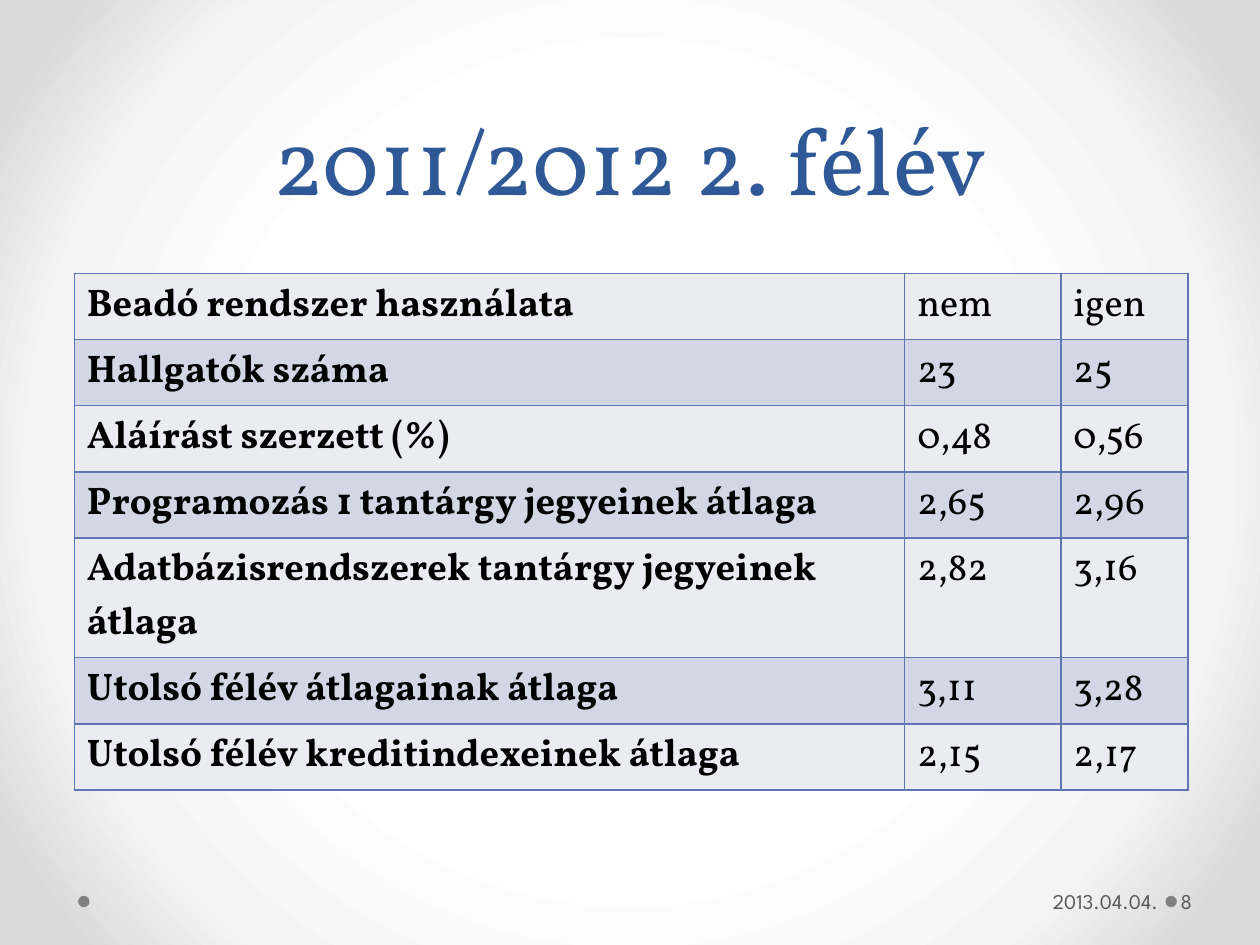
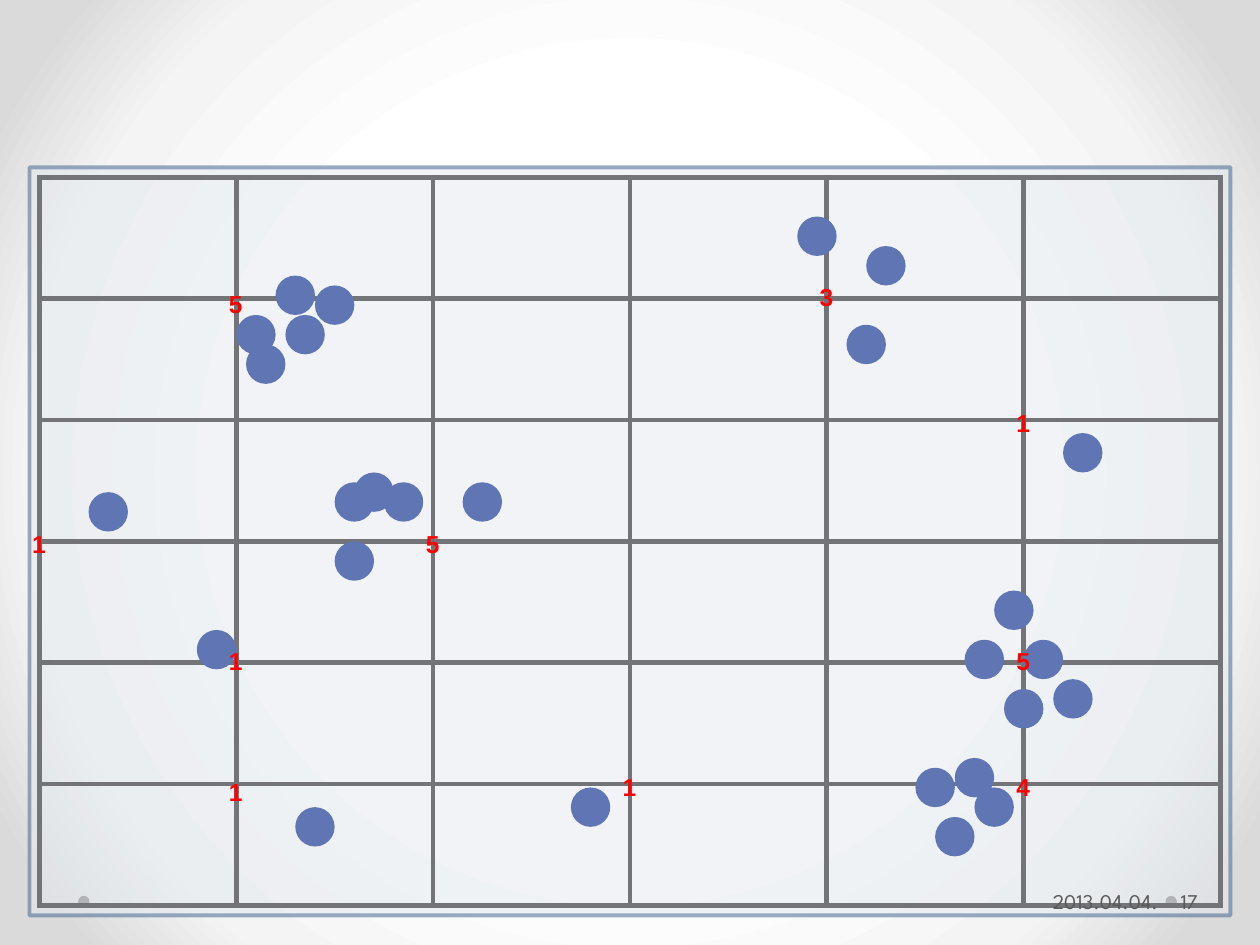
from collections import namedtuple
from dataclasses import dataclass

from pptx import Presentation
from pptx.dml.color import RGBColor
from pptx.enum.shapes import MSO_SHAPE as Preset
from pptx.enum.text import MSO_ANCHOR as Anchor, PP_ALIGN as Align
from pptx.oxml import parse_xml
from pptx.oxml.ns import nsdecls, qn
from pptx.util import Inches, Pt

Box = namedtuple("Box", "left top width height")


@dataclass(frozen=True)
class Theme:
    title_color: str = "2F5897"
    accent: str = "6076B4"
    row_fills: tuple = ("EAECF2", "D2D6E5")
    text: str = "000000"
    footer_text: str = "595959"
    bullet: str = "808080"
    veil: str = "E4E9EF"
    veil_line: str = "385D8A"
    count: str = "FF0000"
    backdrop: tuple = ((50, "FFFFFF"), (76, "F4F4F4"), (92, "DADADA"))
    body_font: str = "Vollkorn"
    footer_font: str = "League Spartan"
    count_font: str = "Arial"
    title_size: int = 54
    title_spacing: int = 58
    table_size: int = 22
    footer_size: int = 12
    count_size: int = 14


THEME = Theme()
SLIDE_BOX = Box(0, 0, 10, 7.5)
STEP = SLIDE_BOX.width / 128

SEMESTER_ROWS = [
    ("Beadó rendszer használata", "nem", "igen"),
    ("Hallgatók száma", "23", "25"),
    ("Aláírást szerzett (%)", "0,48", "0,56"),
    ("Programozás 1 tantárgy jegyeinek átlaga", "2,65", "2,96"),
    ("Adatbázisrendszerek tantárgy jegyeinek átlaga", "2,82", "3,16"),
    ("Utolsó félév átlagainak átlaga", "3,11", "3,28"),
    ("Utolsó félév kreditindexeinek átlaga", "2,15", "2,17"),
]
TWO_LINE_ROW = 4

DOT_STEPS = [
    (20, 14), (24, 10), (21, 17), (25, 14), (28, 11), (30, 31), (32, 30),
    (35, 31), (5, 32), (16, 46), (30, 37), (77, 4), (100, 47), (84, 7),
    (104, 26), (94, 47), (26, 64), (89, 60), (97, 42), (98, 52), (95, 62),
    (91, 65), (93, 59), (43, 31), (54, 62), (103, 51), (82, 15),
]

COUNTS = [
    ("5", 1, 0.84), ("3", 4, 0.78), ("1", 0, 2.74), ("5", 2, 2.74),
    ("1", 1, 3.67), ("1", 5, 1.78), ("1", 1, 4.71), ("1", 3, 4.67),
    ("4", 5, 4.67), ("5", 5, 3.67),
]


def lengths(box):
    return [Inches(value) for value in box]


def format_text(text_frame, font, size, color, bold=False, align=Align.LEFT):
    for paragraph in text_frame.paragraphs:
        paragraph.alignment = align
        for run in paragraph.runs:
            run.font.name = font
            run.font.size = Pt(size)
            run.font.bold = bold
            run.font.color.rgb = RGBColor.from_string(color)


def add_text(slide, box, text, font, size, color, bold=False,
             align=Align.LEFT, anchor=Anchor.TOP, insets=(0.1, 0.05, 0.1, 0.05)):
    text_frame = slide.shapes.add_textbox(*lengths(box)).text_frame
    text_frame.word_wrap = True
    text_frame.vertical_anchor = anchor
    (text_frame.margin_left, text_frame.margin_top,
     text_frame.margin_right, text_frame.margin_bottom) = lengths(insets)
    text_frame.text = text
    format_text(text_frame, font, size, color, bold, align)
    return text_frame


def add_plain_shape(slide, preset, box, color):
    shape = slide.shapes.add_shape(preset, *lengths(box))
    shape.shadow.inherit = False
    shape.fill.solid()
    shape.fill.fore_color.rgb = RGBColor.from_string(color)
    shape.line.fill.background()
    return shape


def border_cell(cell, color, points):
    properties = cell._tc.get_or_add_tcPr()
    for index, side in enumerate(("lnL", "lnR", "lnT", "lnB")):
        properties.insert(index, parse_xml(
            f'<a:{side} {nsdecls("a")} w="{Pt(points)}"><a:solidFill>'
            f'<a:srgbClr val="{color}"/></a:solidFill></a:{side}>'))


def add_plain_table(slide, box, row_heights, column_widths):
    table = slide.shapes.add_table(
        len(row_heights), len(column_widths), *lengths(box)).table
    table.first_row = False
    table.horz_banding = False
    for column, width in zip(table.columns, column_widths):
        column.width = Inches(width)
    for row, height in zip(table.rows, row_heights):
        row.height = Inches(height)
    return table


def add_backdrop(slide):
    stops = "".join(
        f'<a:gs pos="{position * 1000}"><a:srgbClr val="{color}"/></a:gs>'
        for position, color in THEME.backdrop)
    slide.element.cSld.insert(0, parse_xml(
        f'<p:bg {nsdecls("p", "a")}><p:bgPr><a:gradFill rotWithShape="1">'
        f'<a:gsLst>{stops}</a:gsLst><a:path path="circle">'
        '<a:fillToRect l="50000" t="50000" r="50000" b="50000"/></a:path>'
        '</a:gradFill><a:effectLst/></p:bgPr></p:bg>'))


def add_base_slide(presentation):
    slide = presentation.slides.add_slide(presentation.slide_layouts[6])
    add_backdrop(slide)
    for left in (9.25, 0.62):
        add_plain_shape(slide, Preset.OVAL, Box(left, 7.11, 0.09, 0.09), THEME.bullet)
    return slide


def add_footer(slide, box, number):
    style = (THEME.footer_font, THEME.footer_size, THEME.footer_text)
    date_width = 2.28
    number_left = 2.38
    add_text(slide, box._replace(width=date_width), "2013.04.04.", *style,
             align=Align.RIGHT, anchor=Anchor.MIDDLE, insets=(0.1, 0.05, 0.05, 0.05))
    add_text(slide, box._replace(left=box.left + number_left, width=box.width - number_left),
             number, *style, anchor=Anchor.MIDDLE, insets=(0.03, 0.05, 0.05, 0.05))


def add_title(slide, box, text):
    text_frame = add_text(slide, box, text, THEME.body_font, THEME.title_size,
                          THEME.title_color, align=Align.CENTER, anchor=Anchor.BOTTOM)
    text_frame.paragraphs[0].line_spacing = Pt(THEME.title_spacing)


def add_semester_table(slide, box):
    value_widths = (1.24, 1.01)
    widths = (box.width - sum(value_widths), *value_widths)
    tall = 0.95
    heights = [(box.height - tall) / (len(SEMESTER_ROWS) - 1)] * len(SEMESTER_ROWS)
    heights[TWO_LINE_ROW] = tall
    table = add_plain_table(slide, box, heights, widths)
    for row_index, values in enumerate(SEMESTER_ROWS):
        for column_index, value in enumerate(values):
            cell = table.cell(row_index, column_index)
            cell.text_frame.text = value
            format_text(cell.text_frame, THEME.body_font, THEME.table_size,
                        THEME.text, bold=column_index == 0)
            cell.fill.solid()
            cell.fill.fore_color.rgb = RGBColor.from_string(THEME.row_fills[row_index % 2])
            border_cell(cell, THEME.accent, 1)


def add_grid(slide, box, size):
    table = add_plain_table(slide, box, [box.height / size] * size,
                            [box.width / size] * size)
    for cell in table.iter_cells():
        cell.fill.background()
        border_cell(cell, THEME.text, 3)


def add_veil(slide, box):
    outer = Box(box.left - STEP, box.top - STEP,
                box.width + 2 * STEP, box.height + 2 * STEP)
    veil = add_plain_shape(slide, Preset.RECTANGLE, outer, THEME.veil)
    veil.line.color.rgb = RGBColor.from_string(THEME.veil_line)
    veil.line.width = Pt(2.25)
    for color in veil.element.spPr.iter(qn("a:srgbClr")):
        color.append(parse_xml(f'<a:alpha {nsdecls("a")} val="50000"/>'))


def add_board(slide, box):
    size = 6
    add_grid(slide, box, size)
    add_veil(slide, box)
    diameter = 4 * STEP
    for across, down in DOT_STEPS:
        dot_box = Box(box.left + across * STEP, box.top + down * STEP, diameter, diameter)
        add_plain_shape(slide, Preset.OVAL, dot_box, THEME.accent)
    for count, column, offset in COUNTS:
        left = box.left + column * box.width / size - 2 * STEP
        add_text(slide, Box(left, box.top + offset, 5 * STEP, 0.34), count,
                 THEME.count_font, THEME.count_size, THEME.count, bold=True)


def main():
    presentation = Presentation()
    presentation.slide_width = Inches(SLIDE_BOX.width)
    presentation.slide_height = Inches(SLIDE_BOX.height)
    footer_box = Box(6.96, 6.95, 2.99, 0.4)

    semester_slide = add_base_slide(presentation)
    add_title(semester_slide, Box(0.5, 0, 9, 1.75), "2011/2012 2. félév")
    add_semester_table(semester_slide, Box(0.59, 2.17, 8.84, 4.1))
    add_footer(semester_slide, footer_box, "8")

    board_slide = add_base_slide(presentation)
    add_board(board_slide, Box(4 * STEP, 18 * STEP, 120 * STEP, 74 * STEP))
    add_footer(board_slide, footer_box, "17")

    presentation.save("out.pptx")


if __name__ == "__main__":
    main()
